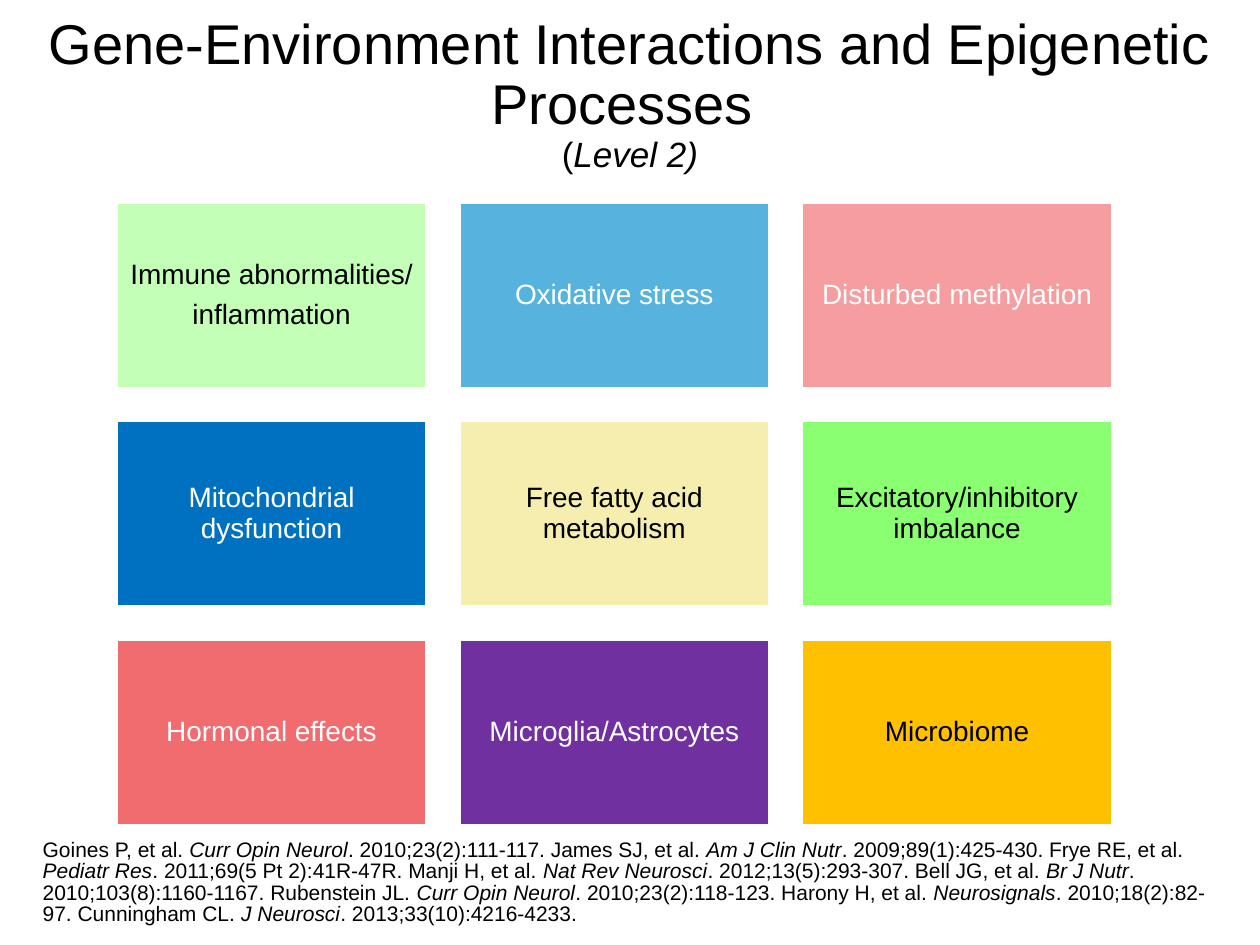
from lxml.etree import SubElement
from pptx import Presentation
from pptx.dml.color import RGBColor
from pptx.enum.shapes import MSO_SHAPE
from pptx.enum.text import MSO_ANCHOR as Anchor, MSO_AUTO_SIZE, PP_ALIGN as Align
from pptx.oxml.ns import qn
from pptx.util import Cm, Pt

COLORS = {
    "black": "000000", "white": "FFFFFF", "mint": "C4FFB8", "sky": "56B3DD",
    "pink": "F69D9F", "blue": "0070C0", "cream": "F5EEAF", "green": "8AFF71",
    "coral": "F16C6F", "purple": "7030A0", "amber": "FFC000",
}
CITATIONS = (
    "Goines P, et al. *Curr Opin Neurol*. 2010;23(2):111-117. "
    "James SJ, et al. *Am J Clin Nutr*. 2009;89(1):425-430. "
    "Frye RE, et al. *Pediatr Res*. 2011;69(5 Pt 2):41R-47R. "
    "Manji H, et al. *Nat Rev Neurosci*. 2012;13(5):293-307. "
    "Bell JG, et al. *Br J Nutr*. 2010;103(8):1160-1167. "
    "Rubenstein JL. *Curr Opin Neurol*. 2010;23(2):118-123. "
    "Harony H, et al. *Neurosignals*. 2010;18(2):82-97. "
    "Cunningham CL. *J Neurosci*. 2013;33(10):4216-4233."
)
MECHANISMS = [
    ("Immune abnormalities/\ninflammation", "mint", "black"),
    ("Oxidative stress", "sky", "white"),
    ("Disturbed methylation", "pink", "white"),
    ("Mitochondrial dysfunction", "blue", "white"),
    ("Free fatty acid metabolism", "cream", "black"),
    ("Excitatory/inhibitory imbalance", "green", "black"),
    ("Hormonal effects", "coral", "white"),
    ("Microglia/Astrocytes", "purple", "white"),
    ("Microbiome", "amber", "black"),
]


def rgb(name):
    return RGBColor.from_string(COLORS[name])


def write(paragraph, text, size, color="black", align=Align.CENTER, spacing=0.9, after=0):
    """Append text to a paragraph; parts between asterisks are italic."""
    paragraph.alignment = align
    paragraph.line_spacing = spacing
    paragraph.space_before = Pt(0)
    paragraph.space_after = Pt(after)
    for index, part in enumerate(text.split("*")):
        if part:
            run = paragraph.add_run()
            run.text = part
            run.font.name = "Arial"
            run.font.size = Pt(size)
            run.font.italic = index % 2 == 1
            run.font.color.rgb = rgb(color)


prs = Presentation()
prs.slide_width, prs.slide_height = Cm(25.4), Cm(19.05)
slide = prs.slides.add_slide(prs.slide_layouts[1])

title = slide.shapes.title
title.left, title.top, title.width, title.height = Cm(0), Cm(0), Cm(25.4), Cm(3.84)
title.text_frame.auto_size = MSO_AUTO_SIZE.NONE
title.text_frame.vertical_anchor = Anchor.MIDDLE
heading = title.text_frame.paragraphs[0]
write(heading, "Gene-Environment Interactions and Epigenetic Processes ", 32)
heading.add_line_break()
SubElement(heading._p[-1], qn("a:rPr"), sz="3200")
write(heading, "(*Level 2)*", 20)

references = slide.placeholders[1]
references.left, references.top = Cm(0.86), Cm(17.35)
references.width, references.height = Cm(23.67), Cm(1.32)
frame = references.text_frame
frame.auto_size = MSO_AUTO_SIZE.NONE
frame.vertical_anchor = Anchor.BOTTOM
frame.margin_left = frame.margin_right = frame.margin_top = frame.margin_bottom = 0
citation = frame.paragraphs[0]
write(citation, CITATIONS, 12, align=Align.LEFT, spacing=0.85)
properties = citation._p.get_or_add_pPr()
properties.set("marL", "0")
properties.set("indent", "0")
SubElement(properties, qn("a:buNone"))

GRID_LEFT, GRID_TOP = 2.34, 4.08
TILE_WIDTH, TILE_HEIGHT, GAP = 6.27, 3.76, 0.64
for index, (label, fill, ink) in enumerate(MECHANISMS):
    row, column = divmod(index, 3)
    tile = slide.shapes.add_shape(
        MSO_SHAPE.RECTANGLE,
        Cm(GRID_LEFT + column * (TILE_WIDTH + GAP)),
        Cm(GRID_TOP + row * (TILE_HEIGHT + GAP)),
        Cm(TILE_WIDTH), Cm(TILE_HEIGHT))
    tile.shadow.inherit = False
    tile.fill.solid()
    tile.fill.fore_color.rgb = rgb(fill)
    tile.line.color.rgb = rgb("white")
    tile.line.width = Pt(2)
    frame = tile.text_frame
    frame.word_wrap = True
    frame.vertical_anchor = Anchor.MIDDLE
    frame.margin_left = frame.margin_right = Cm(0.17)
    frame.margin_top = frame.margin_bottom = Cm(0.17)
    for number, line in enumerate(label.split("\n")):
        paragraph = frame.add_paragraph() if number else frame.paragraphs[0]
        write(paragraph, line, 16, color=ink, after=5.6)

prs.save("out.pptx")
